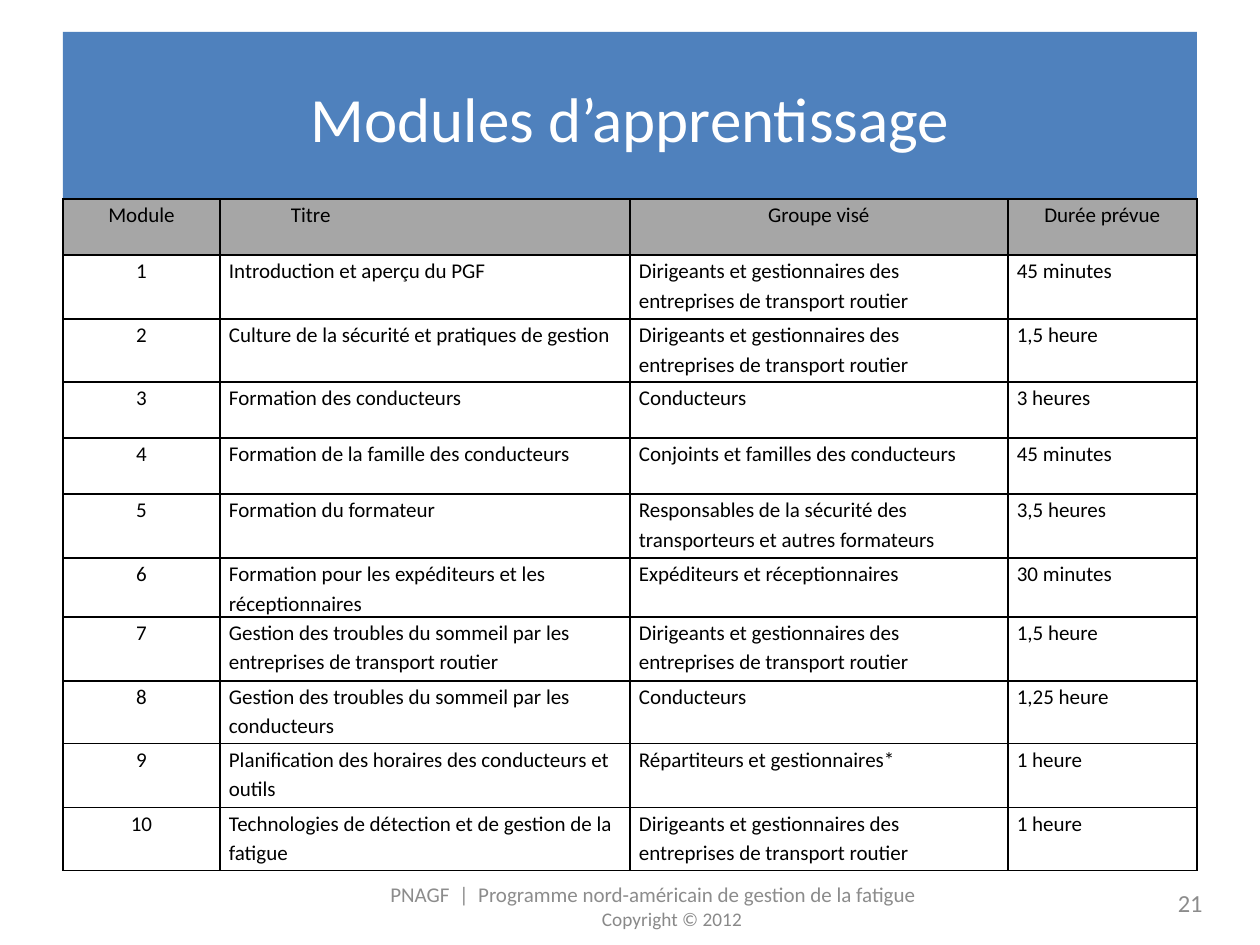
from lxml import etree
from pptx import Presentation
from pptx.dml.color import RGBColor
from pptx.enum.shapes import MSO_SHAPE
from pptx.enum.text import MSO_ANCHOR, PP_ALIGN
from pptx.oxml.ns import qn
from pptx.util import Pt

PX = 914400 // 126
RECT = MSO_SHAPE.RECTANGLE
MID = MSO_ANCHOR.MIDDLE
LEFT, MAIN, RIGHT = PP_ALIGN.LEFT, PP_ALIGN.CENTER, PP_ALIGN.RIGHT
FONT = "Calibri"
HUES = {
    "band": "4F81BD", "head": "A6A6A6", "ink": "000000",
    "title": "FFFFFF", "foot": "8C8C8C", "copy": "898989",
}
COLS = [157, 410, 378, 189]
ROWS = [56, 64, 63, 56, 56, 64, 59, 64, 63, 64, 63]
HEADS = ["Module", "Titre", "Groupe visé", "Durée prévue"]
CHIEFS = "Dirigeants et gestionnaires des entreprises de transport routier"
UNITS = [
    ("Introduction et aperçu du PGF", CHIEFS, "45 minutes"),
    ("Culture de la sécurité et pratiques de gestion", CHIEFS, "1,5 heure"),
    ("Formation des conducteurs", "Conducteurs", "3 heures"),
    ("Formation de la famille des conducteurs",
     "Conjoints et familles des conducteurs", "45 minutes"),
    ("Formation du formateur",
     "Responsables de la sécurité des transporteurs et autres formateurs",
     "3,5 heures"),
    ("Formation pour les expéditeurs et les réceptionnaires",
     "Expéditeurs et réceptionnaires", "30 minutes"),
    ("Gestion des troubles du sommeil par les entreprises de transport routier",
     CHIEFS, "1,5 heure"),
    ("Gestion des troubles du sommeil par les conducteurs",
     "Conducteurs", "1,25 heure"),
    ("Planification des horaires des conducteurs et outils",
     "Répartiteurs et gestionnaires*", "1 heure"),
    ("Technologies de détection et de gestion de la fatigue",
     CHIEFS, "1 heure"),
]


def rgb(name):
    """Return the named colour."""
    return RGBColor.from_string(HUES[name])


def scale(*box):
    """Turn px lengths into EMU."""
    return [size * PX for size in box]


def style(para, size, hue, align):
    """Format a paragraph and its runs."""
    para.alignment = align
    for run in para.runs:
        run.font.name = FONT
        run.font.size = Pt(size)
        run.font.color.rgb = rgb(hue)


def edge(cell):
    """Draw a thin black line on each side of a cell."""
    props = cell._tc.get_or_add_tcPr()
    for spot, side in enumerate(("a:lnL", "a:lnR", "a:lnT", "a:lnB")):
        line = etree.Element(qn(side), w=str(Pt(1)))
        fill = etree.SubElement(line, qn("a:solidFill"))
        etree.SubElement(fill, qn("a:srgbClr"), val=HUES["ink"])
        props.insert(spot, line)


def banner(slide, x, y, w, h):
    """Place the title on its blue band."""
    band = slide.shapes.add_shape(RECT, *scale(x, y, w, h))
    band.shadow.inherit = False
    band.fill.solid()
    band.fill.fore_color.rgb = rgb("band")
    band.line.fill.background()
    title = slide.shapes.title
    title._element.addprevious(band._element)
    title.left, title.top, title.width, title.height = scale(x, y + 6, w, h - 10)
    title.text_frame.text = "Modules d’apprentissage"
    title.text_frame.vertical_anchor = MID
    style(title.text_frame.paragraphs[0], 36, "title", MAIN)


def fill_cell(cell, text, align, head):
    """Write and format one table cell."""
    cell.margin_left = cell.margin_right = 9 * PX
    cell.margin_top = cell.margin_bottom = 0
    if head:
        cell.fill.solid()
        cell.fill.fore_color.rgb = rgb("head")
    else:
        cell.fill.background()
    edge(cell)
    cell.text_frame.text = text
    para = cell.text_frame.paragraphs[0]
    para.line_spacing = 1.15
    style(para, 12, "ink", align)


def grid(slide, x, y):
    """Place the table of modules."""
    rows = [HEADS] + [(str(num), *unit) for num, unit in enumerate(UNITS, 1)]
    box = scale(x, y, sum(COLS), sum(ROWS))
    table = slide.shapes.add_table(len(rows), len(COLS), *box).table
    table.first_row = table.horz_banding = False
    for col, width in zip(table.columns, COLS):
        col.width = width * PX
    for r, (row, high) in enumerate(zip(rows, ROWS)):
        table.rows[r].height = high * PX
        for c, text in enumerate(row):
            mid = c == 0 or (r == 0 and c != 1)
            fill_cell(table.cell(r, c), text, MAIN if mid else LEFT, r == 0)
    props = table.cell(0, 1).text_frame.paragraphs[0]._p.get_or_add_pPr()
    props.set("indent", str(62 * PX))


def note(slide, box, lines):
    """Place a text box of formatted lines and return its frame."""
    frame = slide.shapes.add_textbox(*scale(*box)).text_frame
    frame.word_wrap = True
    frame.vertical_anchor = MID
    frame.text = "\n".join(line[0] for line in lines)
    for para, (_, *look) in zip(frame.paragraphs, lines):
        style(para, *look)
    return frame


def footer(slide, x, y):
    """Place the programme name and the slide number."""
    frame = note(slide, (x, y, 588, 48), [
        ("PNAGF  |  Programme nord-américain de gestion de la fatigue",
         12, "foot", LEFT),
        ("Copyright © 2012", 11, "copy", MAIN),
    ])
    frame.margin_top, frame.margin_bottom = scale(0, 22)
    note(slide, (x + 543, y - 15, 294, 50), [("21", 14, "foot", RIGHT)])


def main():
    """Build and save the slide."""
    deck = Presentation()
    deck.slide_width, deck.slide_height = scale(1260, 945)
    slide = deck.slides.add_slide(deck.slide_layouts[5])
    banner(slide, 63, 32, 1134, 168)
    grid(slide, 63, 199)
    footer(slide, 378, 893)
    deck.save("out.pptx")


if __name__ == "__main__":
    main()
